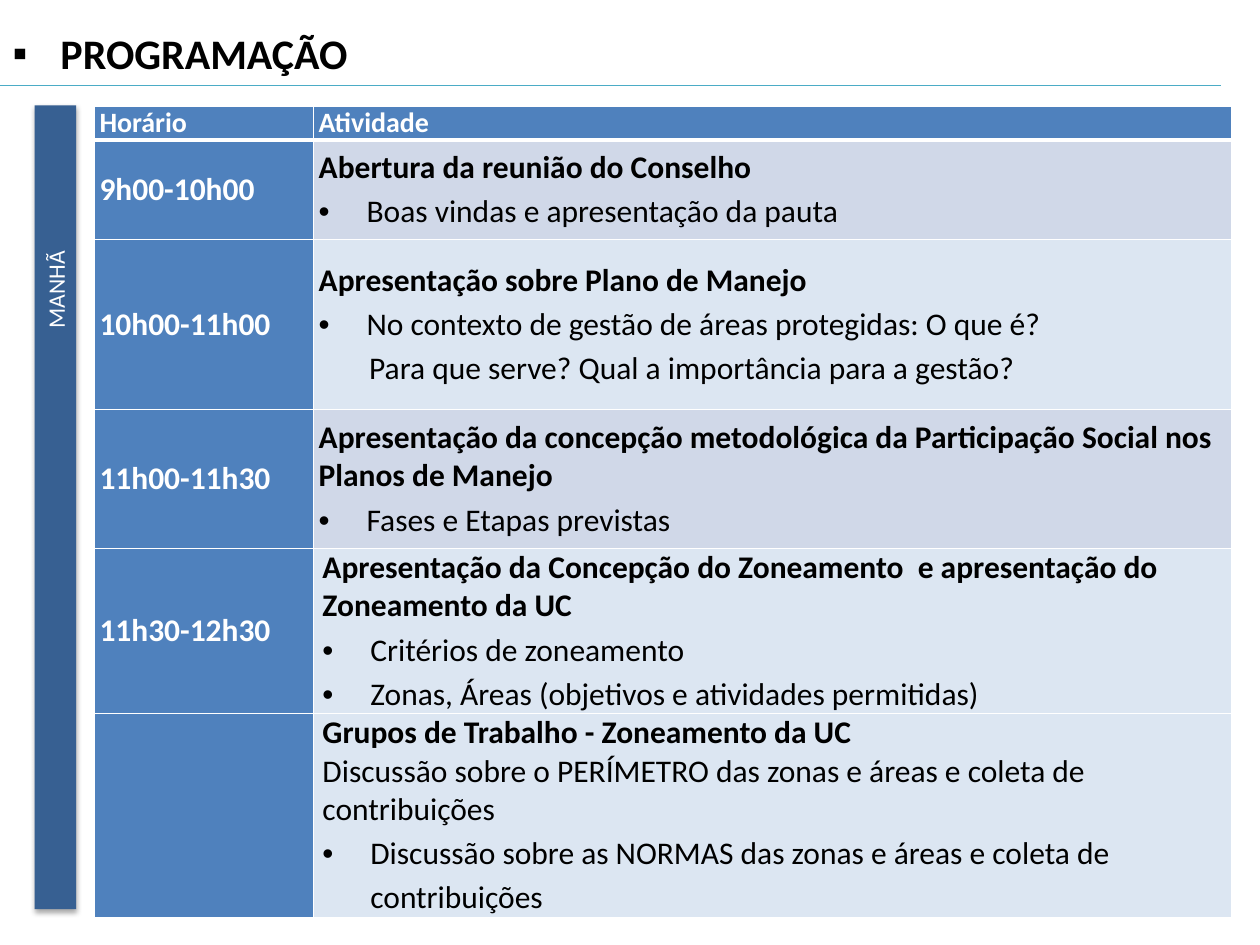
"""Build the morning programme slide with its timetable."""
from dataclasses import dataclass
from typing import Any

from lxml import etree
from pptx import Presentation
from pptx.dml.color import RGBColor
from pptx.enum.shapes import MSO_CONNECTOR, MSO_SHAPE
from pptx.enum.text import MSO_ANCHOR, MSO_AUTO_SIZE, PP_ALIGN
from pptx.oxml.ns import qn
from pptx.util import Emu, Pt

TOP, MIDDLE = MSO_ANCHOR.TOP, MSO_ANCHOR.MIDDLE
LEFT = PP_ALIGN.LEFT
RECTANGLE = MSO_SHAPE.RECTANGLE
STRAIGHT = MSO_CONNECTOR.STRAIGHT
NO_AUTOFIT = MSO_AUTO_SIZE.NONE
EMU_PER_PX = 9144
TITLE_ONLY = 5


@dataclass(frozen=True)
class Theme:
    """Colours, font and type sizes of the slide."""

    font: str = "Calibri"
    white: str = "FFFFFF"
    black: str = "000000"
    bar: str = "376092"
    rule: str = "4BACC6"
    header: str = "4F81BD"
    dark_band: str = "D0D8E8"
    light_band: str = "DCE6F2"
    title_size: float = 24
    header_size: float = 16
    body_size: float = 18
    bar_size: float = 13.5


@dataclass(frozen=True)
class Line:
    """One paragraph of a cell."""

    text: str
    bold: bool = False
    bullet: str = ""
    margin: int = 0
    spacing: float = 1.0


@dataclass(frozen=True)
class Session:
    """One timetable row."""

    time: str
    height: int
    lines: tuple[Line, ...]
    fill: str
    anchor: Any = MIDDLE
    inset: int = 4


THEME = Theme()


def px(value: int) -> Emu:
    """Turn pixels into EMU."""
    return Emu(value * EMU_PER_PX)


def heading(text: str) -> Line:
    """Return a bold line."""
    return Line(text, bold=True)


def item(text: str) -> Line:
    """Return a bulleted line."""
    return Line(text, bullet="•", margin=38, spacing=1.15)


SESSIONS = (
    Session("9h00-10h00", 79, (
        heading("Abertura da reunião do Conselho"),
        item("Boas vindas e apresentação da pauta"),
    ), THEME.dark_band),
    Session("10h00-11h00", 135, (
        heading("Apresentação sobre Plano de Manejo"),
        item("No contexto de gestão de áreas protegidas: O que é?"),
        Line("Para que serve? Qual a importância para a gestão?", margin=40, spacing=1.15),
    ), THEME.light_band),
    Session("11h00-11h30", 110, (
        heading("Apresentação da concepção metodológica da Participação Social nos Planos de Manejo"),
        item("Fases e Etapas previstas"),
    ), THEME.dark_band),
    Session("11h30-12h30", 130, (
        heading("Apresentação da Concepção do Zoneamento  e apresentação do Zoneamento da UC"),
        item("Critérios de zoneamento"),
        item("Zonas, Áreas (objetivos e atividades permitidas)"),
    ), THEME.light_band, TOP, 7),
    Session("", 130, (
        heading("Grupos de Trabalho - Zoneamento da UC"),
        Line("Discussão sobre o PERÍMETRO das zonas e áreas e coleta de contribuições"),
        item("Discussão sobre as NORMAS das zonas e áreas e coleta de contribuições"),
    ), THEME.light_band, TOP, 7),
)


def apply_format(target: Any, values: dict[str, Any]) -> None:
    """Set every attribute named in the values."""
    for name, value in values.items():
        setattr(target, name, value)


def add_element(parent: Any, tag: str, **attributes: Any) -> Any:
    """Append a drawing element with its attributes."""
    return etree.SubElement(parent, qn(tag), {name: str(value) for name, value in attributes.items()})


def paint(fill: Any, color: str) -> None:
    """Give a fill one solid colour."""
    fill.solid()
    fill.fore_color.rgb = RGBColor.from_string(color)


def write_line(paragraph: Any, line: Line, size: float, color: str) -> None:
    """Write and format one paragraph."""
    run = paragraph.add_run()
    run.text = line.text
    apply_format(run.font, {"name": THEME.font, "size": Pt(size), "bold": line.bold})
    run.font.color.rgb = RGBColor.from_string(color)
    apply_format(paragraph, {"alignment": LEFT, "line_spacing": line.spacing})
    properties = paragraph._p.get_or_add_pPr()
    properties.set("marL", str(px(line.margin)))
    properties.set("indent", str(px(-line.margin if line.bullet else 0)))
    if line.bullet:
        add_element(properties, "a:buFont", typeface="Arial")
        add_element(properties, "a:buChar", char=line.bullet)


def add_title(slide: Any) -> None:
    """Fill the title placeholder and draw the rule below it."""
    title = slide.shapes.title
    apply_format(title, {"left": px(0), "top": px(17), "width": px(1000), "height": px(50)})
    apply_format(title.text_frame, {"word_wrap": True, "auto_size": NO_AUTOFIT, "vertical_anchor": MIDDLE})
    line = Line("PROGRAMAÇÃO", bold=True, bullet="▪", margin=38)
    write_line(title.text_frame.paragraphs[0], line, THEME.title_size, THEME.black)
    rule = slide.shapes.add_connector(STRAIGHT, px(0), px(68), px(969), px(68))
    rule.line.width = Pt(0.75)
    rule.line.color.rgb = RGBColor.from_string(THEME.rule)
    add_element(rule._element.spPr, "a:effectLst")


def add_period_bar(slide: Any) -> None:
    """Draw the turned bar that names the part of the day."""
    bar = slide.shapes.add_shape(RECTANGLE, px(-275), px(386), px(638), px(33))
    bar.rotation = 270
    paint(bar.fill, THEME.bar)
    bar.line.fill.background()
    bar.shadow.inherit = False
    effects = bar._element.spPr.find(qn("a:effectLst"))
    shadow = add_element(effects, "a:outerShdw", blurRad=Pt(3.1), dist=Pt(1.8), dir=5400000, rotWithShape=0)
    add_element(add_element(shadow, "a:srgbClr", val=THEME.black), "a:alpha", val=35000)
    apply_format(bar.text_frame, {"word_wrap": True, "vertical_anchor": MIDDLE})
    write_line(bar.text_frame.paragraphs[0], Line("MANHÃ", margin=451), THEME.bar_size, THEME.white)


def fill_cell(cell: Any, lines: tuple[Line, ...], size: float, color: str, fill: str,
              anchor: Any = MIDDLE, inset: int = 4, top: int = 1, bottom: int = 1) -> None:
    """Write a cell and set its borders and fill."""
    apply_format(cell, {"margin_left": px(inset), "margin_right": px(inset), "margin_top": 0,
                        "margin_bottom": 0, "vertical_anchor": anchor})
    properties = cell._tc.get_or_add_tcPr()
    for side, width in {"L": 1, "R": 1, "T": top, "B": bottom}.items():
        border = add_element(properties, f"a:ln{side}", w=Pt(width))
        add_element(add_element(border, "a:solidFill"), "a:srgbClr", val=THEME.white)
    paint(cell.fill, fill)
    for index, line in enumerate(lines):
        paragraph = cell.text_frame.add_paragraph() if index else cell.text_frame.paragraphs[0]
        write_line(paragraph, line, size, color)


def add_timetable(slide: Any) -> None:
    """Draw the table of times and activities."""
    heights = [26] + [session.height for session in SESSIONS]
    frame = slide.shapes.add_table(len(heights), 2, px(75), px(84), px(903), px(sum(heights)))
    table = frame.table
    for column, width in zip(table.columns, (174, 729)):
        column.width = px(width)
    for row, height in zip(table.rows, heights):
        row.height = px(height)
    for index, label in enumerate(("Horário", "Atividade")):
        fill_cell(table.cell(0, index), (heading(label),), THEME.header_size, THEME.white, THEME.header, bottom=3)
    for index, session in enumerate(SESSIONS, start=1):
        top = 3 if index == 1 else 1
        times = (heading(session.time),) if session.time else ()
        fill_cell(table.cell(index, 0), times, THEME.body_size, THEME.white, THEME.header, top=top)
        fill_cell(table.cell(index, 1), session.lines, THEME.body_size, THEME.black, session.fill,
                  session.anchor, session.inset, top)


def main() -> None:
    """Build and save the presentation."""
    presentation = Presentation()
    apply_format(presentation, {"slide_width": px(1000), "slide_height": px(750)})
    slide = presentation.slides.add_slide(presentation.slide_layouts[TITLE_ONLY])
    add_period_bar(slide)
    add_timetable(slide)
    add_title(slide)
    presentation.save("out.pptx")


if __name__ == "__main__":
    main()
